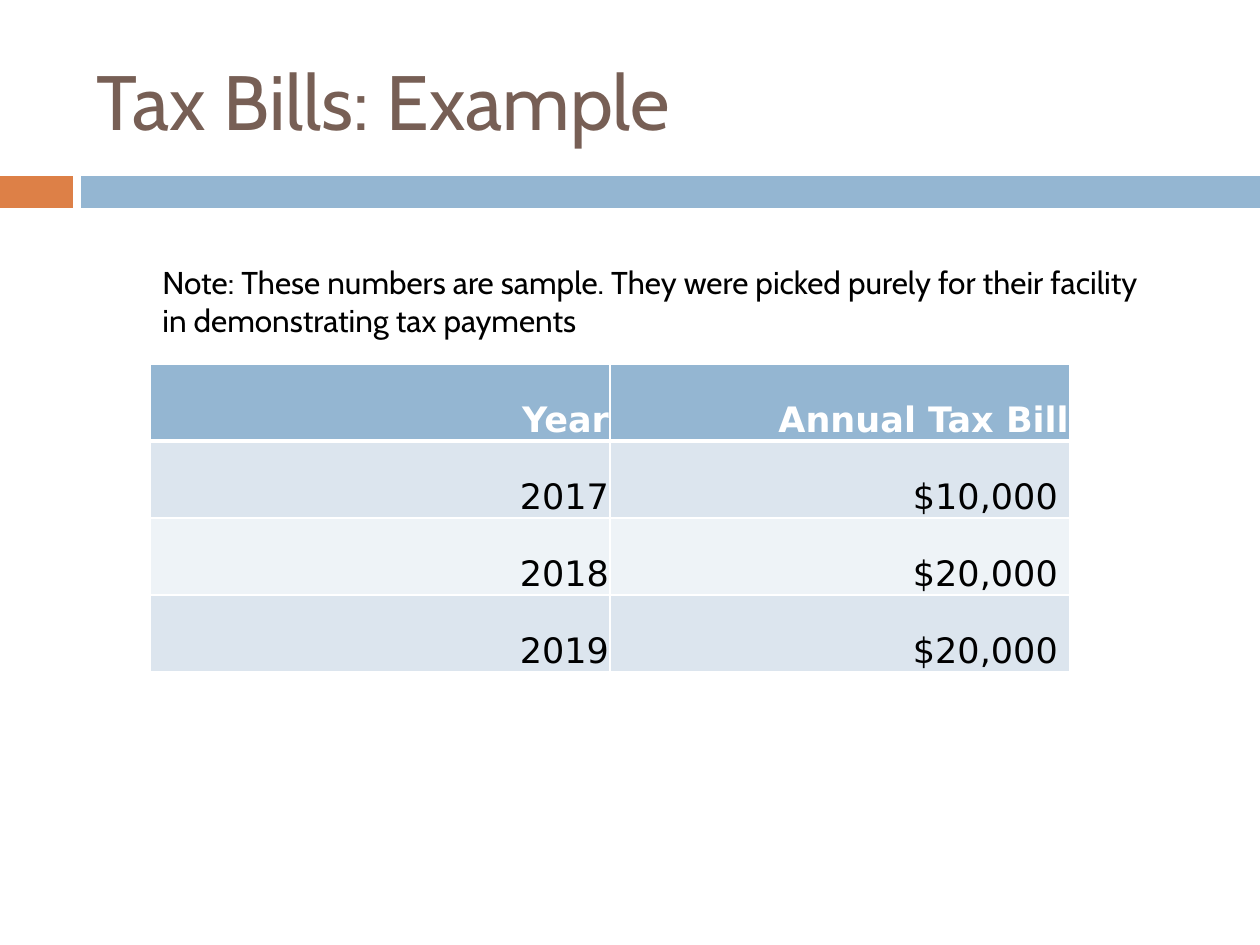
from lxml import etree
from pptx import Presentation
from pptx import util as u
from pptx.dml.color import RGBColor
from pptx.enum import shapes, text
from pptx.oxml.ns import qn

TITLE = "Tax Bills: Example"
NOTE = ("Note: These numbers are sample. They were picked purely for their "
        "facility in demonstrating tax payments")
ROWS = [
    ("Year", "Annual Tax Bill"),
    ("2017", "$10,000 "),
    ("2018", "$20,000 "),
    ("2019", "$20,000 "),
]
COLORS = {"orange": "DD8047", "blue": "94B6D2", "brown": "775F55",
          "band": "DCE5EE", "light": "EEF3F7", "white": "FFFFFF",
          "black": "000000"}
BARS = [("orange", (0, 176, 73, 32)), ("blue", (81, 176, 1179, 32))]
TITLE_BOX = (84, 32, 1124, 136)
NOTE_BOX = (150, 257, 1018, 89)
TABLE_AT = (150, 364)
COL_W, ROW_H = 460, 77


def px(n):
    return round(n * 914400 / 126)


def rgb(name):
    return RGBColor.from_string(COLORS[name])


def place(sp, box):
    for name, n in zip(("left", "top", "width", "height"), box):
        setattr(sp, name, px(n))


def write(tf, words, color, align=text.PP_ALIGN.LEFT, **fmt):
    p = tf.paragraphs[0]
    p.alignment = align
    r = p.add_run()
    r.text = words
    r.font.color.rgb = rgb(color)
    for key, value in fmt.items():
        setattr(r.font, key, value)


def border(cell, widths):
    pr = cell._tc.get_or_add_tcPr()
    for i, (side, pt) in enumerate(widths.items()):
        ln = etree.Element(qn("a:ln" + side), w=str(u.Pt(pt)))
        fill = etree.SubElement(ln, qn("a:solidFill"))
        etree.SubElement(fill, qn("a:srgbClr"), val=COLORS["white"])
        pr.insert(i, ln)


prs = Presentation()
prs.slide_width, prs.slide_height = px(1260), px(945)
s = prs.slides.add_slide(prs.slide_layouts[5])

for color, box in BARS:
    bar = s.shapes.add_shape(shapes.MSO_SHAPE.RECTANGLE, *map(px, box))
    bar.shadow.inherit = False
    bar.fill.solid()
    bar.fill.fore_color.rgb = rgb(color)
    bar.line.fill.background()

title = s.shapes.title
place(title, TITLE_BOX)
title.text_frame.vertical_anchor = text.MSO_ANCHOR.MIDDLE
write(title.text_frame, TITLE, "brown", name="Cabin", size=u.Pt(44))

table = s.shapes.add_table(len(ROWS), 2, *map(px, TABLE_AT), px(2 * COL_W),
                           px(len(ROWS) * ROW_H)).table
for col in table.columns:
    col.width = px(COL_W)
for i, row in enumerate(ROWS):
    head = i == 0
    fill = "blue" if head else "band" if i % 2 else "light"
    for j, words in enumerate(row):
        cell = table.cell(i, j)
        cell.fill.solid()
        cell.fill.fore_color.rgb = rgb(fill)
        cell.vertical_anchor = text.MSO_ANCHOR.BOTTOM
        cell.margin_left = cell.margin_right = cell.margin_top = px(1)
        cell.margin_bottom = 0
        write(cell.text_frame, words, "white" if head else "black",
              text.PP_ALIGN.RIGHT, name="DejaVu Sans", size=u.Pt(20), bold=head)
        border(cell, {"L": 1, "R": 1, "T": 3 if i == 1 else 1,
                      "B": 3 if head else 1})

note = s.shapes.add_textbox(*map(px, NOTE_BOX))
note.text_frame.word_wrap = True
write(note.text_frame, NOTE, "black", name="Cabin", size=u.Pt(18))

prs.save("out.pptx")
